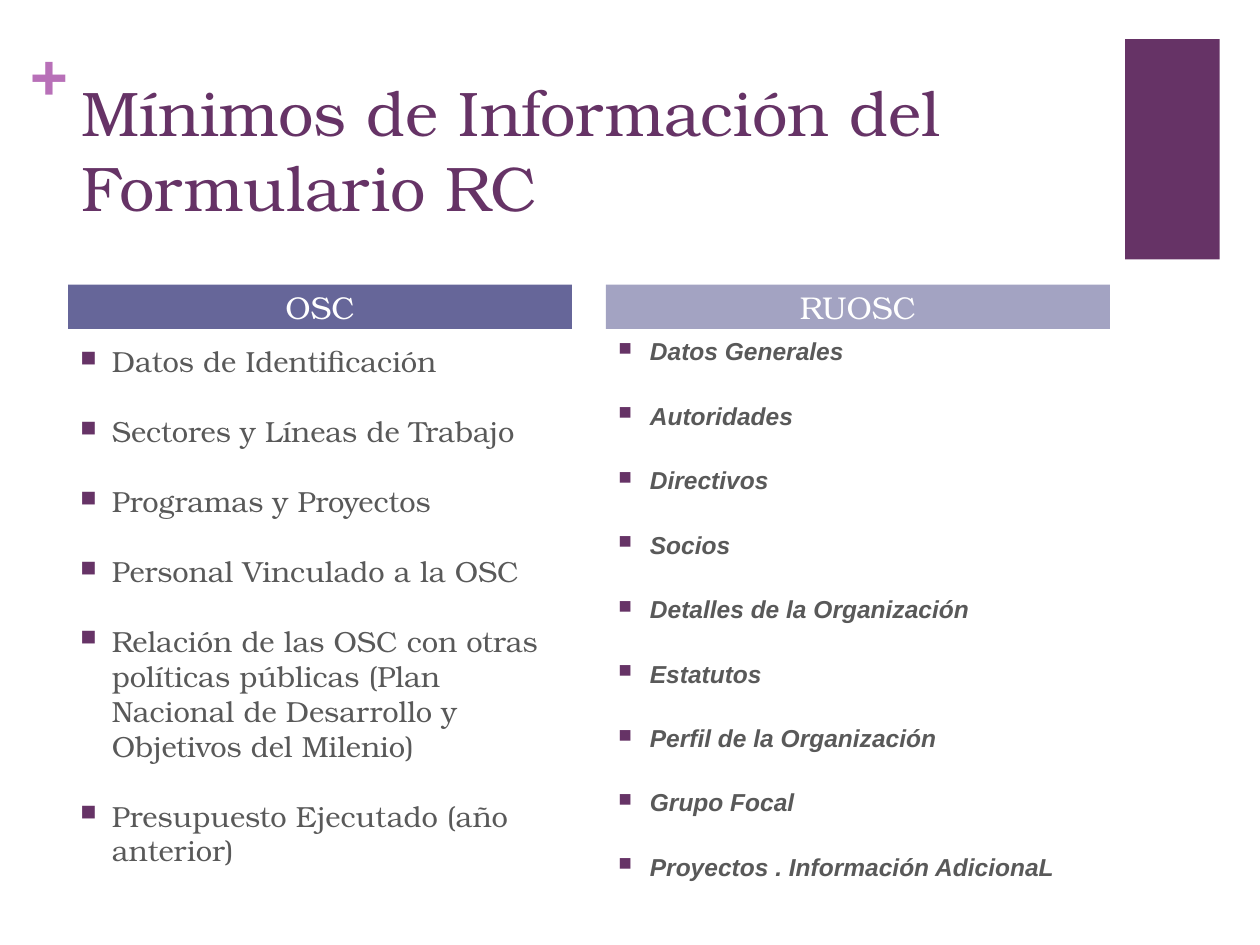
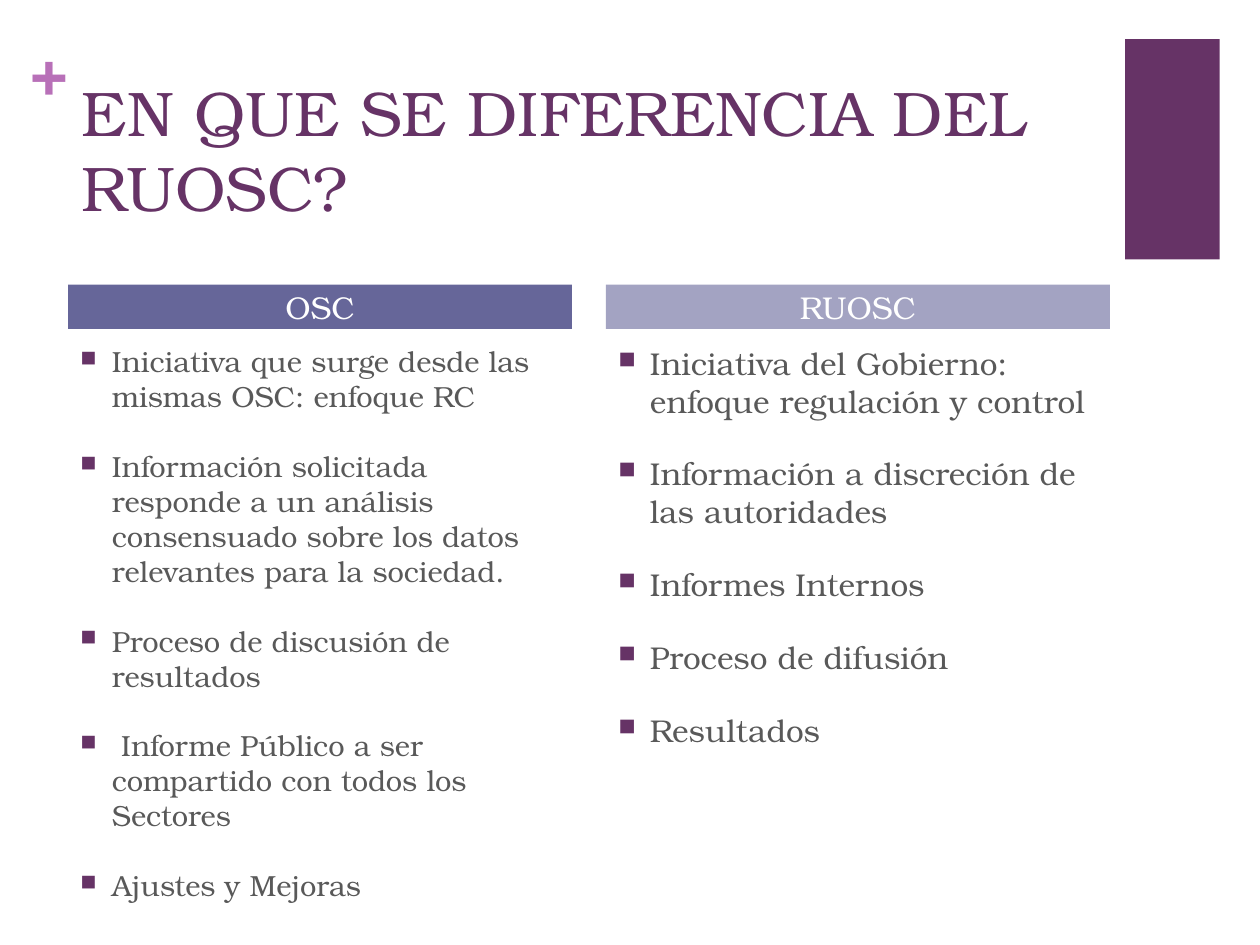
"""Build two slides that compare the OSC and RUOSC registers in two bulleted columns."""
from lxml.etree import SubElement
from pptx import Presentation
from pptx.dml.color import RGBColor
from pptx.enum.shapes import MSO_SHAPE
from pptx.enum.text import MSO_ANCHOR, MSO_AUTO_SIZE, PP_ALIGN
from pptx.oxml.ns import qn
from pptx.util import Inches, Pt

PLUM = RGBColor(0x66, 0x33, 0x66)
ORCHID = RGBColor(0xB8, 0x70, 0xB8)
INDIGO = RGBColor(0x66, 0x66, 0x99)
LAVENDER = RGBColor(0xA3, 0xA3, 0xC2)
GREY = RGBColor(0x59, 0x59, 0x59)
WHITE = RGBColor(0xFF, 0xFF, 0xFF)
SERIF = "TeX Gyre Bonum"
SANS = "Arial"
COLUMN_WIDTH = Inches(4)
HEADINGS = [("OSC", Inches(0.54), INDIGO), ("RUOSC", Inches(4.81), LAVENDER)]

COMPARISONS = [
    ("Mínimos de Información del Formulario RC", [
        (2.68, 4.02, SERIF, 16.6, [
            "Datos de Identificación",
            "Sectores y Líneas de Trabajo",
            "Programas y Proyectos",
            "Personal Vinculado a la OSC",
            "Relación de las OSC con otras políticas públicas "
            "(Plan Nacional de Desarrollo y Objetivos del Milenio)",
            "Presupuesto Ejecutado (año anterior)",
        ]),
        (2.62, 4.72, SANS, 14, [
            "Datos Generales",
            "Autoridades",
            "Directivos",
            "Socios",
            "Detalles de la Organización",
            "Estatutos",
            "Perfil de la Organización",
            "Grupo Focal",
            "Proyectos . Información AdicionaL",
        ]),
    ]),
    ("EN QUE SE DIFERENCIA DEL RUOSC?", [
        (2.68, 4.02, SERIF, 16.6, [
            "Iniciativa que surge desde las mismas OSC: enfoque RC",
            "Información solicitada responde a un análisis consensuado "
            "sobre los datos relevantes para la sociedad.",
            "Proceso de discusión de resultados",
            " Informe Público a ser compartido con todos los Sectores",
            "Ajustes y Mejoras",
        ]),
        (2.68, 4.02, SERIF, 18, [
            "Iniciativa del Gobierno: enfoque regulación y control",
            "Información a discreción de las autoridades",
            "Informes Internos",
            "Proceso de difusión",
            "Resultados",
        ]),
    ]),
]


def style(paragraph, text, font_name, size, color):
    paragraph.text = text
    paragraph.font.name = font_name
    paragraph.font.size = Pt(size)
    paragraph.font.color.rgb = color


def add_band(slide, left, top, width, height, color):
    band = slide.shapes.add_shape(MSO_SHAPE.RECTANGLE, left, top, width, height)
    band.shadow.inherit = False
    band.fill.solid()
    band.fill.fore_color.rgb = color
    band.line.fill.background()
    return band


prs = Presentation()
prs.slide_width, prs.slide_height = Inches(10), Inches(7.5)

for title_text, columns in COMPARISONS:
    slide = prs.slides.add_slide(prs.slide_layouts[5])
    add_band(slide, Inches(8.93), Inches(0.31), Inches(0.75), Inches(1.75), PLUM)

    plus = slide.shapes.add_textbox(Inches(0.24), Inches(0.25), Inches(0.29), Inches(0.61))
    plus_frame = plus.text_frame
    plus_frame.margin_left = plus_frame.margin_right = 0
    plus_frame.margin_top = plus_frame.margin_bottom = 0
    style(plus_frame.paragraphs[0], "+", SERIF, 36, ORCHID)
    plus_frame.paragraphs[0].font.bold = True

    title = slide.shapes.title
    title.left, title.top = Inches(0.55), Inches(0.53)
    title.width, title.height = Inches(8.26), Inches(1.22)
    title.text_frame.vertical_anchor = MSO_ANCHOR.TOP
    title.text_frame.auto_size = MSO_AUTO_SIZE.NONE
    style(title.text_frame.paragraphs[0], title_text, SERIF, 36, PLUM)
    title.text_frame.paragraphs[0].alignment = PP_ALIGN.LEFT

    for (heading, left, color), (top, height, font_name, size, points) in zip(HEADINGS, columns):
        band = add_band(slide, left, Inches(2.26), COLUMN_WIDTH, Inches(0.35), color)
        band.text_frame.margin_top = band.text_frame.margin_bottom = 0
        band.text_frame.vertical_anchor = MSO_ANCHOR.MIDDLE
        style(band.text_frame.paragraphs[0], heading, SERIF, 18, WHITE)
        band.text_frame.paragraphs[0].alignment = PP_ALIGN.CENTER

        column = slide.shapes.add_textbox(left, Inches(top), COLUMN_WIDTH, Inches(height))
        column.text_frame.word_wrap = True
        for index, point in enumerate(points):
            paragraph = column.text_frame.add_paragraph() if index else column.text_frame.paragraphs[0]
            style(paragraph, point, font_name, size, GREY)
            paragraph.font.bold = paragraph.font.italic = font_name == SANS
            paragraph.space_before = Pt(20)
            properties = paragraph._p.get_or_add_pPr()
            properties.set("marL", str(Inches(0.25)))
            properties.set("indent", str(-Inches(0.25)))
            bullet_color = SubElement(properties, qn("a:buClr"))
            SubElement(bullet_color, qn("a:srgbClr"), val=str(PLUM))
            SubElement(properties, qn("a:buSzPct"), val="75000")
            SubElement(properties, qn("a:buChar"), char="■")
            properties.append(properties.find(qn("a:defRPr")))

prs.save("out.pptx")
